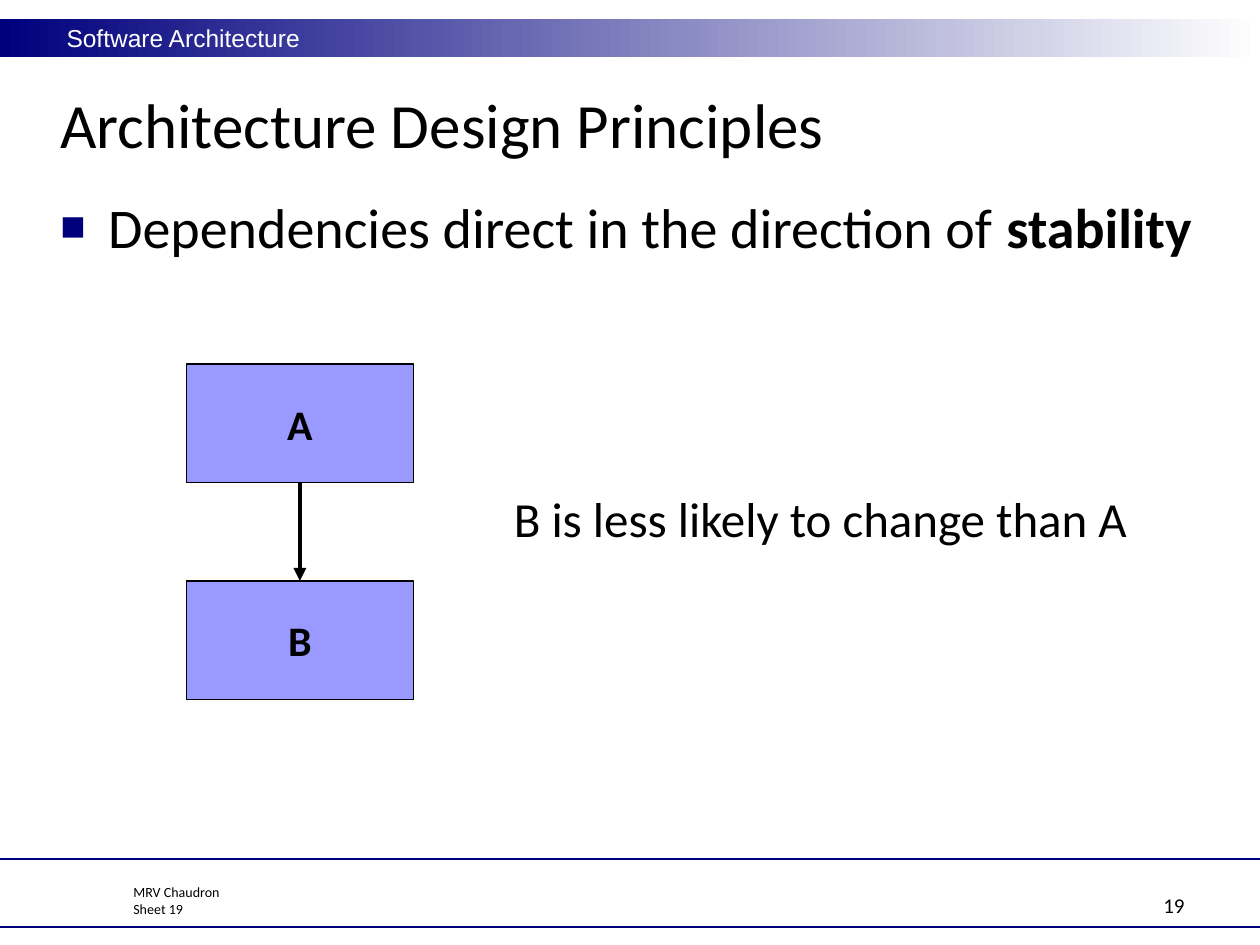
import pptx
import pptx.util
import pptx.dml.color
import pptx.enum.shapes
import pptx.enum.text
import pptx.oxml.ns
import lxml.etree

NAVY = pptx.dml.color.RGBColor(0x00, 0x00, 0x7D)
WHITE = pptx.dml.color.RGBColor(0xFF, 0xFF, 0xFF)
BLACK = pptx.dml.color.RGBColor(0x00, 0x00, 0x00)
LILAC = pptx.dml.color.RGBColor(0x99, 0x99, 0xFF)
ANCHOR = pptx.enum.text.MSO_ANCHOR
ALIGN = pptx.enum.text.PP_ALIGN
RECTANGLE = pptx.enum.shapes.MSO_SHAPE.RECTANGLE
qn = pptx.oxml.ns.qn

presentation = pptx.Presentation()
presentation.slide_width = pptx.util.Inches(10)
presentation.slide_height = pptx.util.Inches(7.5)
slide = presentation.slides.add_slide(presentation.slide_layouts[6])

# Grid: 100 columns by 100 rows
COLUMN = presentation.slide_width // 100
ROW = presentation.slide_height // 100


def write(shape, lines, size, color=BLACK, font="Calibri", anchor=ANCHOR.TOP, align=ALIGN.LEFT):
    """Each line is a list of (text, bold) runs."""
    frame = shape.text_frame
    frame.word_wrap = True
    frame.vertical_anchor = anchor
    for index, line in enumerate(lines):
        paragraph = frame.add_paragraph() if index else frame.paragraphs[0]
        paragraph.alignment = align
        for text, bold in line:
            run = paragraph.add_run()
            run.text = text
            run.font.name = font
            run.font.size = pptx.util.Pt(size)
            run.font.bold = bold
            run.font.color.rgb = color


def add_line(left, top, right, bottom, color, width):
    line = slide.shapes.add_connector(
        pptx.enum.shapes.MSO_CONNECTOR.STRAIGHT,
        int(left * COLUMN), int(top * ROW), int(right * COLUMN), int(bottom * ROW))
    line.line.color.rgb = color
    line.line.width = pptx.util.Pt(width)
    lxml.etree.SubElement(line._element.spPr, qn("a:effectLst"))
    return line


# Header band
band = slide.shapes.add_shape(RECTANGLE, 0, 2 * ROW, 100 * COLUMN, 4 * ROW)
band.shadow.inherit = False
band.line.fill.background()
band.fill.gradient()
band.fill.gradient_angle = 0
for stop, color in zip(band.fill.gradient_stops, (NAVY, WHITE)):
    stop.color.rgb = color

# Footer rules
for row in (90.93, 98.13):
    add_line(0, row, 100, row, NAVY, 1.25)

# Texts: left, top, width, height in grid units, then lines and style
texts = [
    (4.3, 1.73, 91.4, 4.4, [[("Software Architecture", False)]],
     dict(size=14, color=WHITE, font="Arial")),
    (3.8, 7.6, 93.5, 10.93, [[("Architecture Design Principles", False)]],
     dict(size=36, anchor=ANCHOR.MIDDLE)),
    (71.7, 91.07, 23.3, 6.67, [[("19", False)]],
     dict(size=12, anchor=ANCHOR.BOTTOM, align=ALIGN.RIGHT)),
    (9.6, 91.2, 80.7, 6.53, [[("MRV Chaudron", False)], [("Sheet 19", False)]],
     dict(size=8, anchor=ANCHOR.BOTTOM)),
    (39.8, 51.07, 58.6, 7.6, [[("B is less likely to change than A", False)]],
     dict(size=28)),
    (3.8, 19.73, 93.5, 69.73,
     [[("Dependencies direct in the direction of ", False), ("stability", True)]],
     dict(size=32)),
]
for left, top, width, height, lines, style in texts:
    box = slide.shapes.add_textbox(
        int(left * COLUMN), int(top * ROW), int(width * COLUMN), int(height * ROW))
    write(box, lines, **style)

# Square bullet on the principle, the last text added
properties = box.text_frame.paragraphs[0]._p.get_or_add_pPr()
indent = int(3.8 * COLUMN)
properties.set("marL", str(indent))
properties.set("indent", str(-indent))
bullet_color = lxml.etree.SubElement(properties, qn("a:buClr"))
lxml.etree.SubElement(bullet_color, qn("a:srgbClr"), val=str(NAVY))
lxml.etree.SubElement(properties, qn("a:buSzPct"), val="75000")
lxml.etree.SubElement(properties, qn("a:buFont"), typeface="Arial")
lxml.etree.SubElement(properties, qn("a:buChar"), char="■")

# Components A and B
BOX_LEFT, BOX_WIDTH, BOX_HEIGHT = 14.8, 18, 12.53
BOX_TOPS = {"A": 38.53, "B": 61.47}
for name, top in BOX_TOPS.items():
    component = slide.shapes.add_shape(
        RECTANGLE, int(BOX_LEFT * COLUMN), int(top * ROW),
        int(BOX_WIDTH * COLUMN), int(BOX_HEIGHT * ROW))
    component.shadow.inherit = False
    component.fill.solid()
    component.fill.fore_color.rgb = LILAC
    component.line.color.rgb = BLACK
    component.line.width = pptx.util.Pt(0.75)
    write(component, [[(name, True)]], 24, anchor=ANCHOR.MIDDLE, align=ALIGN.CENTER)

# Dependency arrow from A to B
center = BOX_LEFT + BOX_WIDTH / 2
arrow = add_line(center, BOX_TOPS["A"] + BOX_HEIGHT, center, BOX_TOPS["B"], BLACK, 2.5)
lxml.etree.SubElement(arrow.line._get_or_add_ln(), qn("a:tailEnd"), type="triangle")

presentation.save("out.pptx")
